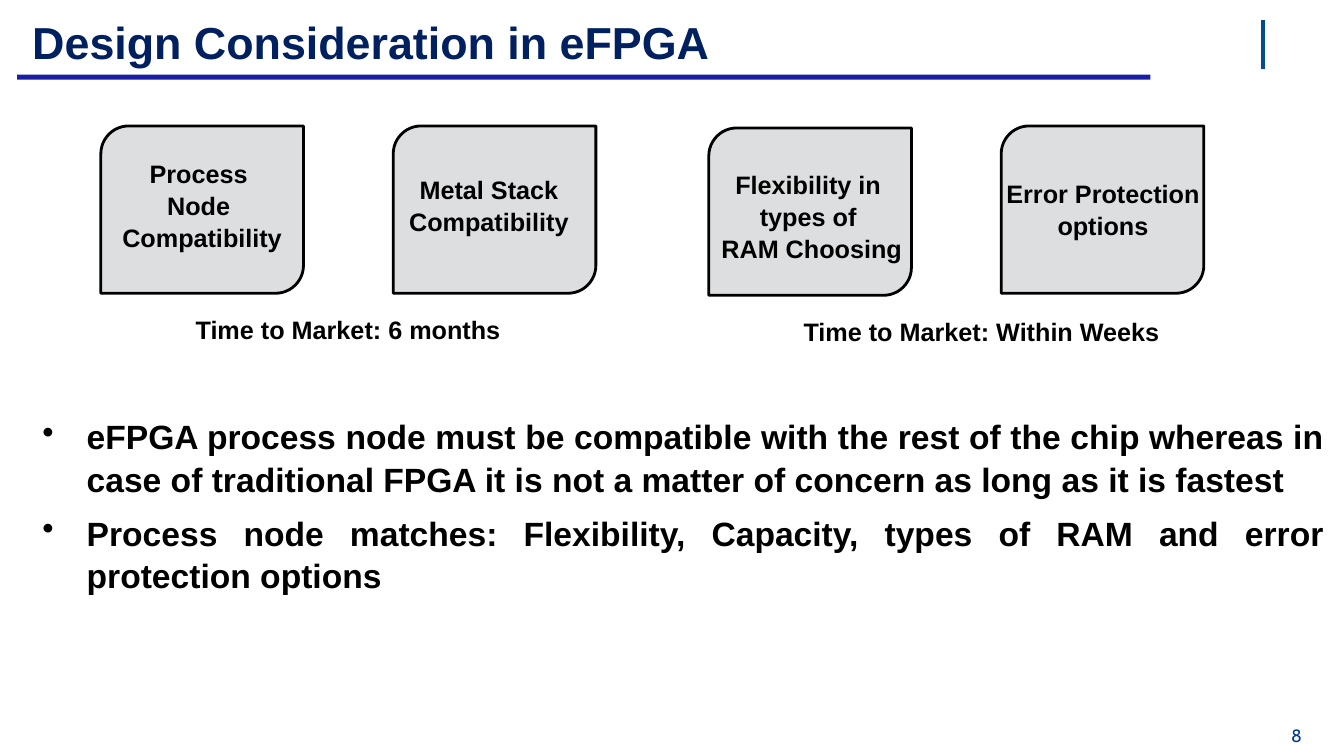
from lxml import etree
from pptx import Presentation
from pptx.dml.color import RGBColor
from pptx.enum.shapes import MSO_CONNECTOR, MSO_SHAPE
from pptx.enum.text import MSO_ANCHOR, PP_ALIGN
from pptx.oxml.ns import qn
from pptx.util import Inches, Pt

RECTANGLE = MSO_SHAPE.RECTANGLE
CARD_SHAPE = MSO_SHAPE.ROUND_2_DIAG_RECTANGLE
STRAIGHT = MSO_CONNECTOR.STRAIGHT
TOP, MIDDLE = MSO_ANCHOR.TOP, MSO_ANCHOR.MIDDLE
LEFT, CENTER, JUSTIFY = PP_ALIGN.LEFT, PP_ALIGN.CENTER, PP_ALIGN.JUSTIFY

COLORS = {
    "rule": "191EA2",
    "divider": "024C90",
    "title": "002060",
    "number": "003893",
    "card": "DCDEE0",
    "black": "000000",
}
CARD_WIDTH, CARD_HEIGHT = 2.01, 1.66
CARDS = [
    ((1, 1.25), (1.09, 1.52, 1.83, 1.02), ["Process ", "Node ", "Compatibility"]),
    ((3.9, 1.25), (3.9, 1.67, 1.9, 0.72), ["Metal Stack", "Compatibility"]),
    ((7.03, 1.27), (7.09, 1.63, 1.92, 1.02),
     ["Flexibility in ", "types of ", "RAM Choosing"]),
    ((9.93, 1.25), (9.87, 1.71, 2.14, 0.72), ["Error Protection options"]),
]
CAPTIONS = [
    ((1.88, 3.05, 3.31, 0.42), "Time to Market: 6 months"),
    ((7.91, 3.07, 3.74, 0.42), "Time to Market: Within Weeks"),
]
POINTS = [
    "eFPGA process node must be compatible with the rest of the chip whereas in "
    "case of traditional FPGA it is not a matter of concern as long as it is fastest",
    "Process node matches: Flexibility, Capacity, types of RAM and error "
    "protection options",
]


def color(name):
    """Return the named colour."""
    return RGBColor.from_string(COLORS[name])


def add_block(page, kind, place, fill, line=None):
    """Add a filled shape, outlined when a line colour is given."""
    block = page.shapes.add_shape(kind, *map(Inches, place))
    block.shadow.inherit = False
    block.fill.solid()
    block.fill.fore_color.rgb = color(fill)
    if line:
        block.line.color.rgb = color(line)
        block.line.width = Pt(2)
    else:
        block.line.fill.background()


def add_divider(page):
    """Add the short vertical line at the top right."""
    divider = page.shapes.add_connector(
        STRAIGHT, Inches(12.53), Inches(0.2), Inches(12.53), Inches(0.68))
    divider.line.color.rgb = color("divider")
    divider.line.width = Pt(3)
    etree.SubElement(divider._element.spPr, qn("a:effectLst"))


def add_text(page, place, lines, size, ink="black", align=LEFT, anchor=MIDDLE,
             inset=0.06, font="Arial", bold=True, wrap=True):
    """Add a text box with one paragraph per line and return its paragraphs."""
    frame = page.shapes.add_textbox(*map(Inches, place)).text_frame
    frame.word_wrap = wrap
    frame.vertical_anchor = anchor
    frame.margin_left = frame.margin_right = Inches(inset)
    frame.margin_top = frame.margin_bottom = Inches(inset)
    frame.text = "\n".join(lines)
    for para in frame.paragraphs:
        para.alignment = align
        para.line_spacing = 1.05
        para.font.name = font
        para.font.size = Pt(size)
        para.font.bold = bold
        para.font.color.rgb = color(ink)
    return frame.paragraphs


def add_bullet(para):
    """Give a paragraph a hanging bullet."""
    properties = para._p.get_or_add_pPr()
    properties.set("marL", str(Inches(0.68)))
    properties.set("indent", str(Inches(-0.44)))
    bullet = etree.Element(qn("a:buChar"), char="•")
    properties.find(qn("a:defRPr")).addprevious(bullet)


def add_points(page):
    """Add the justified bullet list."""
    paragraphs = add_text(page, (0.18, 4.11, 12.95, 2.42), POINTS, 24,
                          align=JUSTIFY, anchor=TOP, inset=0)
    for para in paragraphs[1:]:
        para.space_before = Pt(8.4)
    for para in paragraphs:
        add_bullet(para)


def main():
    """Build the slide and save it."""
    deck = Presentation()
    deck.slide_width, deck.slide_height = Inches(13.33), Inches(7.5)
    page = deck.slides.add_slide(deck.slide_layouts[6])
    add_block(page, RECTANGLE, (0.17, 0.74, 11.24, 0.05), "rule")
    add_divider(page)
    add_text(page, (0.18, 0.01, 11.17, 0.78), ["Design Consideration in eFPGA"],
             32, ink="title", inset=0.14)
    add_points(page)
    add_text(page, (12.75, 7.18, 0.22, 0.21), ["8"], 12.7, ink="number",
             align=CENTER, anchor=TOP, inset=0, font="Cabin", bold=False, wrap=False)
    for corner, label_place, lines in CARDS:
        add_block(page, CARD_SHAPE, (*corner, CARD_WIDTH, CARD_HEIGHT), "card", "black")
        add_text(page, label_place, lines, 18, align=CENTER)
    for place, caption in CAPTIONS:
        add_text(page, place, [caption], 18)
    deck.save("out.pptx")


if __name__ == "__main__":
    main()
